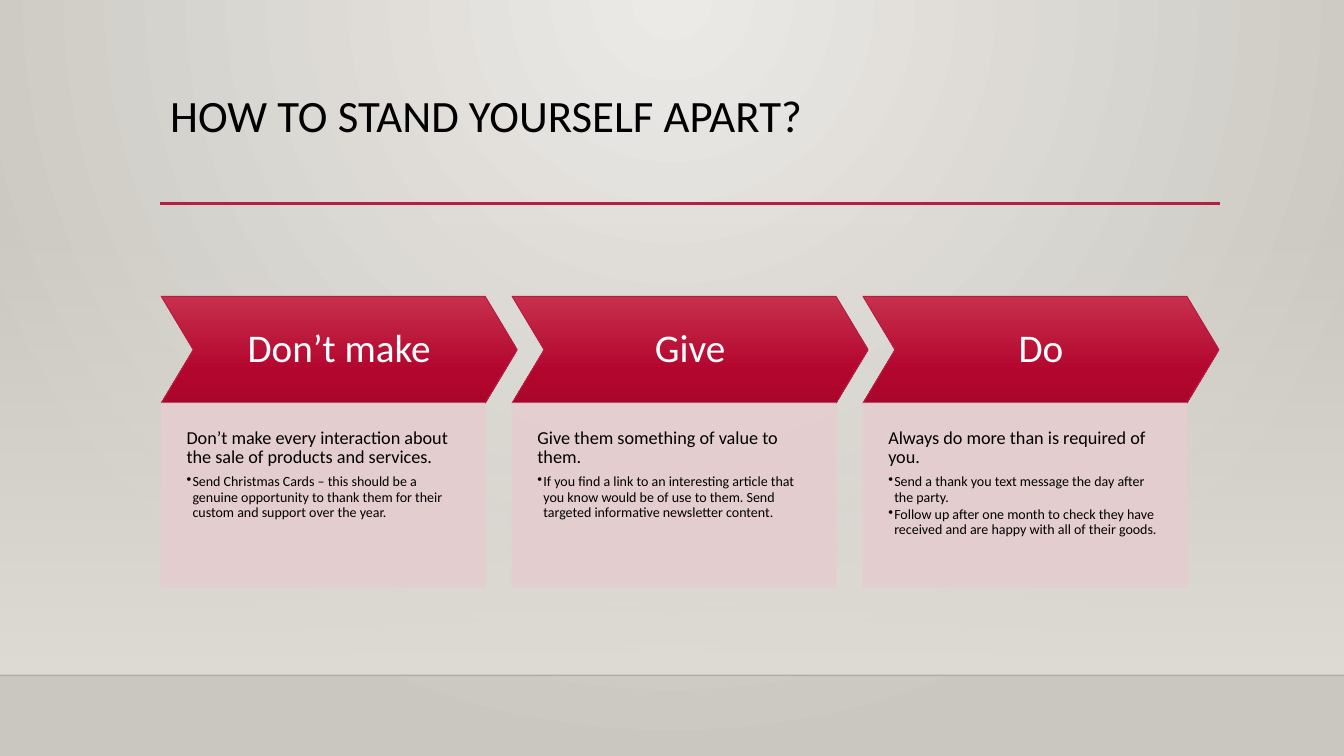
from pptx import Presentation
from pptx.dml.color import RGBColor
from pptx.enum.shapes import MSO_CONNECTOR, MSO_SHAPE
from pptx.enum.text import MSO_ANCHOR, PP_ALIGN
from pptx.oxml import parse_xml
from pptx.oxml.ns import nsdecls, qn
from pptx.util import Inches, Pt

CHEVRON, RECT = MSO_SHAPE.CHEVRON, MSO_SHAPE.RECTANGLE
STRAIGHT = MSO_CONNECTOR.STRAIGHT
TOP, MIDDLE = MSO_ANCHOR.TOP, MSO_ANCHOR.MIDDLE
LEFT, CENTER = PP_ALIGN.LEFT, PP_ALIGN.CENTER

TITLE = "HOW TO STAND YOURSELF APART?"
STEPS = [
    ("Don’t make",
     "Don’t make every interaction about the sale of products and services.",
     ["Send Christmas Cards – this should be a genuine opportunity to thank them "
      "for their custom and support over the year."]),
    ("Give",
     "Give them something of value to them.",
     ["If you find a link to an interesting article that you know would be of use "
      "to them. Send targeted informative newsletter content."]),
    ("Do",
     "Always do more than is required of you.",
     ["Send a thank you text message the day after the party.",
      "Follow up after one month to check they have received and are happy with "
      "all of their goods."]),
]
COLORS = {"black": "000000", "white": "FFFFFF", "red": "B71E42",
          "pink": "E6CDCF", "sand": "DFDBD5"}
BACK = [(0, "ECEAE7", 100), (100, "CAC7C1", 100)]
WALL = [(0, COLORS["sand"], 0), (100, COLORS["sand"], 100)]
ARROW = [(0, "C7304C", 100), (69, "B3062F", 100), (100, "AA062C", 100)]
DOWN = '<a:lin ang="5400000" scaled="0"/>'
ROUND = ('<a:path path="circle"><a:fillToRect l="43000" t="0" r="43000" '
         'b="100000"/></a:path>')
FONT = "Calibri"
WIDE, HIGH, FLOOR = 13.33, 7.5, 6.7
START, PITCH = 1.6, 3.48
HEAD_TOP, HEAD_W, HEAD_H = 2.94, 3.53, 1.06
BODY_TOP, BODY_W, BODY_H = 4, 3.21, 1.82


def shade(root, stops, kind):
    items = "".join(
        f'<a:gs pos="{pos * 1000}"><a:srgbClr val="{color}">'
        f'<a:alpha val="{alpha * 1000}"/></a:srgbClr></a:gs>'
        for pos, color, alpha in stops)
    grad = parse_xml(f'<a:gradFill {nsdecls("a")} rotWithShape="1">'
                     f'<a:gsLst>{items}</a:gsLst>{kind}</a:gradFill>')
    old = root.find(".//" + qn("a:solidFill"))
    old.getparent().replace(old, grad)


def fade(root, alpha):
    for color in root.iter(qn("a:srgbClr")):
        color.append(parse_xml(f'<a:alpha {nsdecls("a")} val="{alpha * 1000}"/>'))


def add_form(slide, kind, box, color, edge=None):
    form = slide.shapes.add_shape(kind, *map(Inches, box))
    form.shadow.inherit = False
    form.fill.solid()
    form.fill.fore_color.rgb = RGBColor.from_string(COLORS[color])
    if edge:
        form.line.color.rgb = RGBColor.from_string(COLORS[edge])
        form.line.width = Pt(0.75)
    else:
        form.line.fill.background()
    return form


def add_rule(slide, left, right, y, color, width):
    rule = slide.shapes.add_connector(
        STRAIGHT, *map(Inches, (left, y, right, y)))
    rule.line.color.rgb = RGBColor.from_string(COLORS[color])
    rule.line.width = Pt(width)
    props = rule._element.spPr
    props.append(parse_xml(f'<a:effectLst {nsdecls("a")}/>'))
    return props


def set_text(form, lines, color, anchor, align, pads):
    frame = form.text_frame
    frame.word_wrap = True
    frame.vertical_anchor = anchor
    (frame.margin_left, frame.margin_top,
     frame.margin_right, frame.margin_bottom) = map(Inches, pads)
    for i, (text, size, after, dot) in enumerate(lines):
        para = frame.add_paragraph() if i else frame.paragraphs[0]
        para.text = text
        para.alignment = align
        para.line_spacing = 0.9
        para.space_after = Pt(after)
        if dot:
            props = para._p.get_or_add_pPr()
            props.set("marL", str(Inches(0.06)))
            props.set("indent", str(Inches(-0.06)))
            props.append(parse_xml(f'<a:buChar {nsdecls("a")} char="•"/>'))
        para.font.name = FONT
        para.font.size = Pt(size)
        para.font.color.rgb = RGBColor.from_string(COLORS[color])


def add_step(slide, left, name, lead, points):
    head = add_form(slide, CHEVRON, (left, HEAD_TOP, HEAD_W, HEAD_H), "red", "red")
    head.adjustments[0] = 0.3
    shade(head._element.spPr, ARROW, DOWN)
    set_text(head, [(name, 28, 0, False)], "white", MIDDLE, CENTER, [0.13] * 4)
    body = add_form(slide, RECT, (left, BODY_TOP, BODY_W, BODY_H), "pink", "pink")
    fade(body._element.spPr, 90)
    lines = [(lead, 13, 5, False)] + [(point, 10, 1.5, True) for point in points]
    set_text(body, lines, "black", TOP, LEFT, (0.25, 0.25, 0.25, 0.51))


def main():
    deck = Presentation()
    deck.slide_width, deck.slide_height = Inches(WIDE), Inches(HIGH)
    slide = deck.slides.add_slide(deck.slide_layouts[6])
    slide.background.fill.solid()
    slide.background.fill.fore_color.rgb = RGBColor.from_string(COLORS["sand"])
    shade(slide.element, BACK, ROUND)

    wall = add_form(slide, RECT, (0, 2.21, WIDE, FLOOR - 2.21), "sand")
    shade(wall._element.spPr, WALL, DOWN)
    fade(add_rule(slide, 0, WIDE, FLOOR, "black", 1), 20)
    add_rule(slide, 1.59, 12.1, 2.02, "red", 2.5)

    title = slide.shapes.add_textbox(*map(Inches, (1.59, 0.88, 10.5, 1.15)))
    set_text(title, [(TITLE, 32, 0, False)], "black", TOP, LEFT,
             (0.1, 0.05, 0.1, 0.05))
    for i, step in enumerate(STEPS):
        add_step(slide, START + i * PITCH, *step)
    deck.save("out.pptx")


if __name__ == "__main__":
    main()
